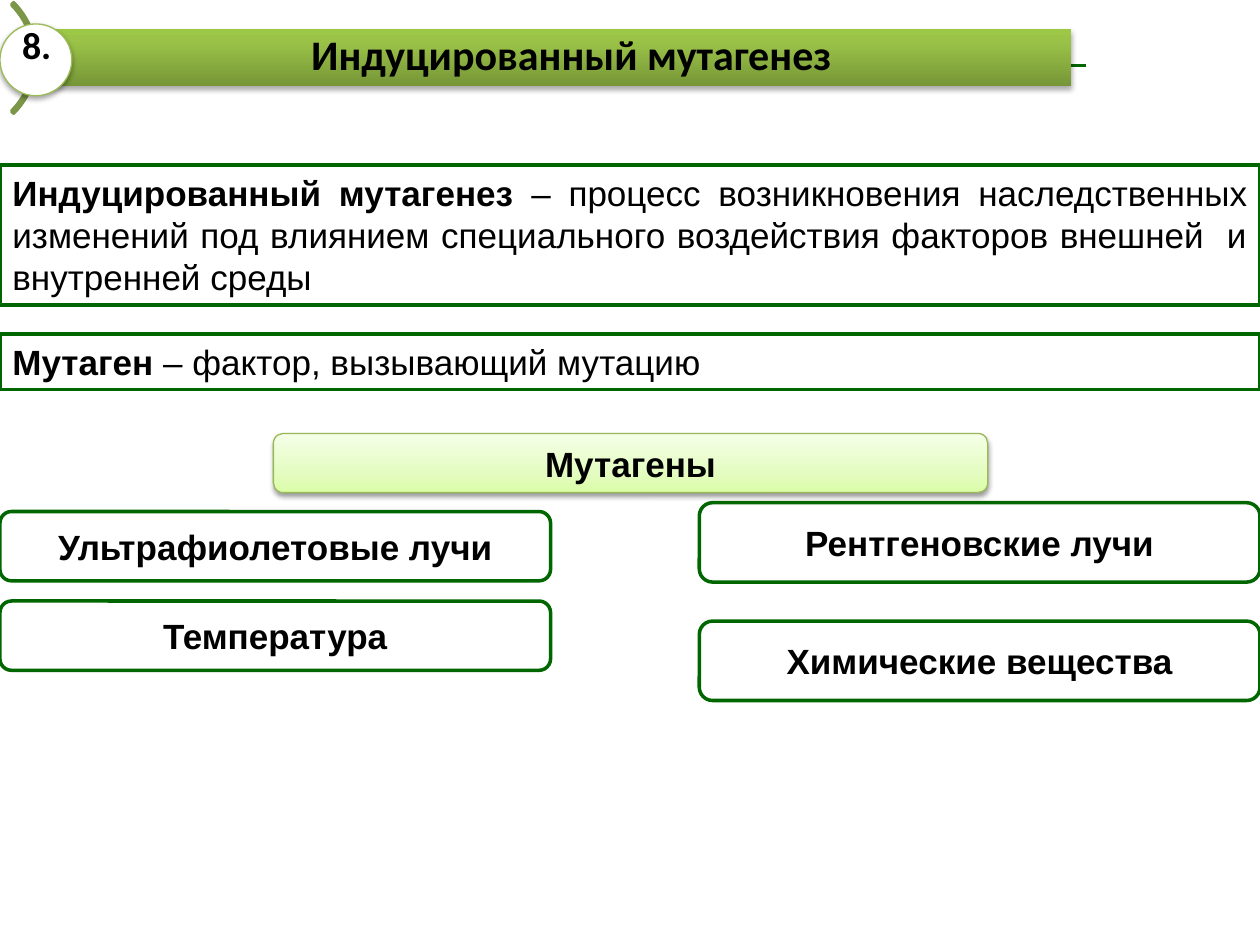
from lxml import etree
from pptx import Presentation, util as u
from pptx.dml.color import RGBColor
from pptx.enum import shapes, text
from pptx.oxml.ns import qn

COLORS = {
    "ink": "000000", "white": "FFFFFF", "frame": "006600",
    "arc": "7C9647", "badge": "9BBB59", "heading": "98B955",
}
BANNER_GRADIENT = [(0, "779737"), (80, "9BC348"), (100, "9DC746")]
HEADING_GRADIENT = [(0, "DAFDA7"), (35, "E4FCC2"), (100, "F5FFE7")]
KIND = shapes.MSO_SHAPE
ALIGN = text.PP_ALIGN
MIDDLE, TOP = text.MSO_ANCHOR.MIDDLE, text.MSO_ANCHOR.TOP


class SlideStyle:
    def __init__(self, slide):
        self.slide = slide

    def color(self, name):
        return RGBColor.from_string(COLORS[name])

    def effects(self, element, opacity=None, distance=1.8):
        """Replace theme effects by none, or by a soft shadow below."""
        effect_list = etree.SubElement(element.spPr, qn("a:effectLst"))
        if opacity:
            shadow = etree.SubElement(
                effect_list, qn("a:outerShdw"), blurRad=str(u.Pt(3.1)),
                dist=str(u.Pt(distance)), dir="5400000", rotWithShape="0")
            tint = etree.SubElement(shadow, qn("a:srgbClr"), val=COLORS["ink"])
            etree.SubElement(tint, qn("a:alpha"), val=str(opacity * 1000))

    def gradient(self, shape, stops):
        shape.fill.gradient()
        shape.fill.gradient_angle = 90
        stop_list = shape.element.spPr.find(".//" + qn("a:gsLst"))
        for stop in list(stop_list):
            stop_list.remove(stop)
        for position, value in stops:
            stop = etree.SubElement(stop_list, qn("a:gs"), pos=str(position * 1000))
            etree.SubElement(stop, qn("a:srgbClr"), val=value)

    def line(self, start, end, color="frame", width=2):
        rule = self.slide.shapes.add_connector(
            shapes.MSO_CONNECTOR.STRAIGHT, *map(u.Inches, start + end))
        rule.line.color.rgb = self.color(color)
        rule.line.width = u.Pt(width)
        self.effects(rule.element)

    def shape(self, kind, box, fill=None, stops=None, line="frame", width=2,
              shadow=(), adjustments=()):
        shape = self.slide.shapes.add_shape(kind, *map(u.Inches, box))
        for index, value in enumerate(adjustments):
            shape.adjustments[index] = value
        if stops:
            self.gradient(shape, stops)
        elif fill:
            shape.fill.solid()
            shape.fill.fore_color.rgb = self.color(fill)
        else:
            shape.fill.background()
        if line:
            shape.line.color.rgb = self.color(line)
            shape.line.width = u.Pt(width)
        else:
            shape.line.fill.background()
        self.effects(shape.element, *shadow)
        return shape

    def add_text(self, shape, runs, align=ALIGN.CENTER, anchor=MIDDLE,
                 size=20, font="Arial", **frame_format):
        """Runs are (wording, bold) pairs of one paragraph."""
        frame = shape.text_frame
        settings = {"word_wrap": True, "vertical_anchor": anchor, **frame_format}
        for key, value in settings.items():
            setattr(frame, key, value)
        paragraph = frame.paragraphs[0]
        paragraph.alignment = align
        for wording, bold in runs:
            run = paragraph.add_run()
            run.text = wording
            run.font.color.rgb = self.color("ink")
            for key, value in {"size": u.Pt(size), "name": font, "bold": bold}.items():
                setattr(run.font, key, value)
        return paragraph

    def label(self, box, wording, **look):
        self.add_text(self.shape(KIND.ROUNDED_RECTANGLE, box, **look), [(wording, True)])

    def definition(self, box, term, meaning):
        self.add_text(self.shape(KIND.RECTANGLE, box),
                      [(term, True), (meaning, False)], ALIGN.JUSTIFY, TOP)

    def caption(self, box, wording, **look):
        area = self.slide.shapes.add_textbox(*map(u.Inches, box))
        return self.add_text(area, [(wording, True)], font="Calibri", **look)


def main():
    deck = Presentation()
    deck.slide_width, deck.slide_height = u.Inches(10), u.Inches(7.5)
    page = SlideStyle(deck.slides.add_slide(deck.slide_layouts[6]))

    # Rule behind the title banner
    page.line((0.28, 0.52), (8.62, 0.52))

    # Definitions
    page.definition(
        (0, 1.31, 10, 1.11), "Индуцированный мутагенез ",
        "– процесс возникновения наследственных изменений под влиянием "
        "специального воздействия факторов внешней  и внутренней среды")
    page.definition((0, 2.65, 10, 0.44), "Мутаген ", "– фактор, вызывающий мутацию")

    # Mutagens: heading and two columns of kinds
    page.label((2.17, 3.44, 5.67, 0.47), "Мутагены", stops=HEADING_GRADIENT,
               line="heading", width=0.75, shadow=(38, 1.6))
    columns = [
        (0, 4.06, 4.37, 0.55, 0.71, ["Ультрафиолетовые лучи", "Температура"]),
        (5.55, 3.99, 4.45, 0.63, 0.94, ["Рентгеновские лучи", "Химические вещества"]),
    ]
    for left, top, width, height, step, mutagens in columns:
        for row, mutagen in enumerate(mutagens):
            page.label((left, top + row * step, width, height), mutagen)

    # Title banner with arc and number badge
    page.shape(KIND.BLOCK_ARC, (-0.95, -0.16, 1.24, 1.24), line="arc",
               adjustments=(189, 27, 0.019))
    banner = (0.28, 0.23, 8.22, 0.45)
    page.shape(KIND.RECTANGLE, banner, stops=BANNER_GRADIENT, line=None, shadow=(35,))
    inset = u.Inches(0.07)
    title = page.caption(banner, "Индуцированный мутагенез", size=24,
                         margin_left=u.Inches(0.36), margin_right=inset,
                         margin_top=inset, margin_bottom=inset)
    title.line_spacing = 0.9
    page.shape(KIND.OVAL, (0, 0.19, 0.57, 0.57), fill="white", line="badge",
               width=0.75, shadow=(35,))
    page.caption((0, 0.13, 0.65, 0.44), "8. ", size=21.6)

    deck.save("out.pptx")


if __name__ == "__main__":
    main()
